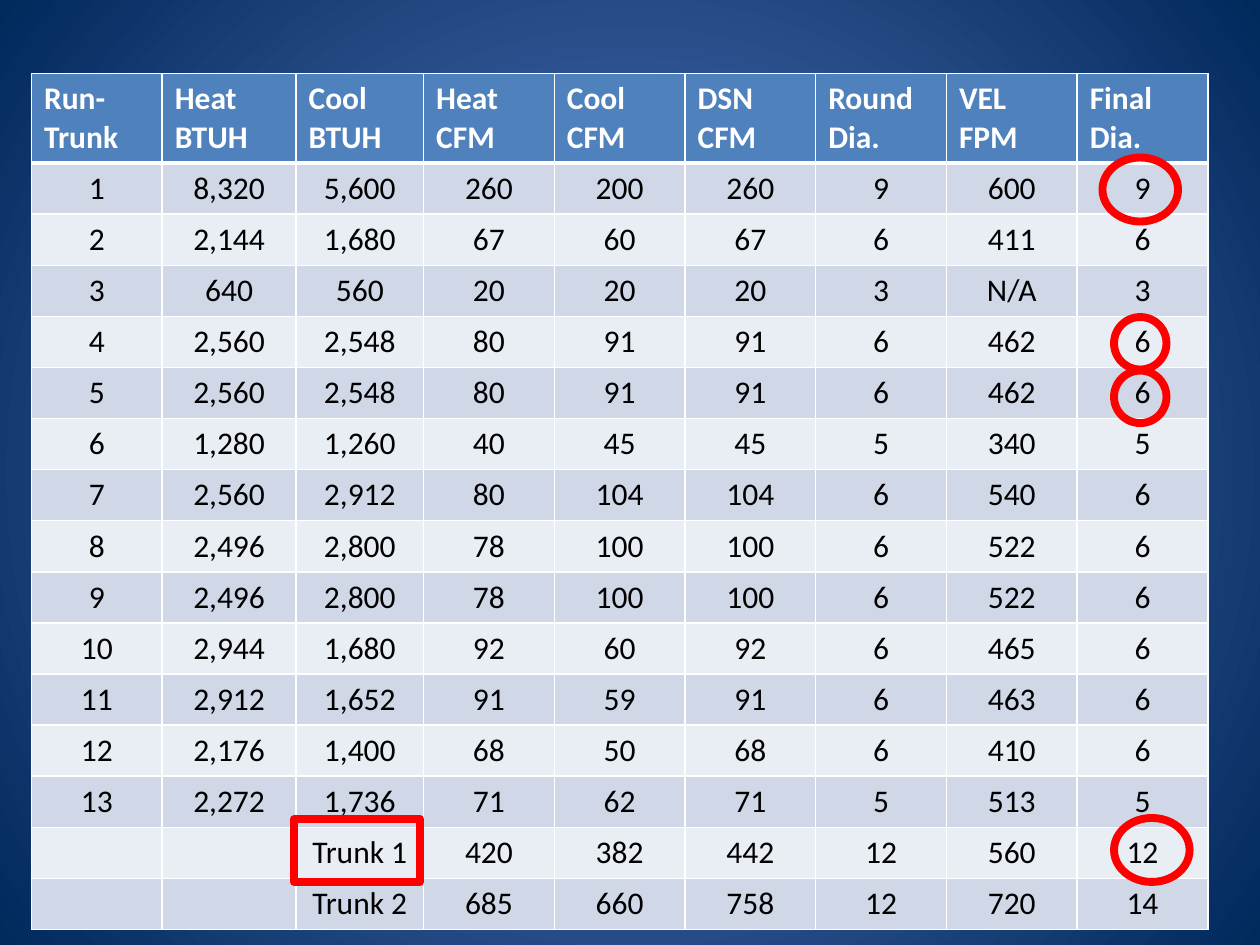
import pptx
import pptx.dml.color
import pptx.enum.shapes
import pptx.enum.text
import pptx.oxml
import pptx.oxml.ns
import pptx.util

COLORS = {
    "glow": "5E7CC5",
    "navy": "00295C",
    "head": "4F81BD",
    "odd": "D0D8E8",
    "even": "E9EDF4",
    "white": "FFFFFF",
    "black": "000000",
    "red": "FF0000",
}
HEADS = ["Run-Trunk", "Heat BTUH", "Cool\nBTUH", "Heat\nCFM", "Cool\nCFM",
         "DSN\nCFM", "Round\nDia.", "VEL\nFPM", "Final\nDia."]
RUNS = [
    ["1", "8,320", "5,600", "260", "200", "260", "9", "600", "9"],
    ["2", "2,144", "1,680", "67", "60", "67", "6", "411", "6"],
    ["3", "640", "560", "20", "20", "20", "3", "N/A", "3"],
    ["4", "2,560", "2,548", "80", "91", "91", "6", "462", "6"],
    ["5", "2,560", "2,548", "80", "91", "91", "6", "462", "6"],
    ["6", "1,280", "1,260", "40", "45", "45", "5", "340", "5"],
    ["7", "2,560", "2,912", "80", "104", "104", "6", "540", "6"],
    ["8", "2,496", "2,800", "78", "100", "100", "6", "522", "6"],
    ["9", "2,496", "2,800", "78", "100", "100", "6", "522", "6"],
    ["10", "2,944", "1,680", "92", "60", "92", "6", "465", "6"],
    ["11", "2,912", "1,652", "91", "59", "91", "6", "463", "6"],
    ["12", "2,176", "1,400", "68", "50", "68", "6", "410", "6"],
    ["13", "2,272", "1,736", "71", "62", "71", "5", "513", "5"],
    ["", "", "Trunk 1", "420", "382", "442", "12", "560", "12"],
    ["", "", "Trunk 2", "685", "660", "758", "12", "720", "14"],
]
# Grid units, 120 across the slide and 90 down
WIDTHS = [12.45, 12.75, 12.15] + [12.45] * 6
ROW = 4.87
OVAL = pptx.enum.shapes.MSO_SHAPE.OVAL
RECT = pptx.enum.shapes.MSO_SHAPE.RECTANGLE
MARKS = [
    (OVAL, 105, 15, 7.2, 6.1),
    (OVAL, 106.1, 30.2, 5, 5),
    (OVAL, 106.1, 35.3, 5, 5),
    (OVAL, 106.1, 77.9, 7.2, 6.1),
    (RECT, 28, 78, 12, 6),
]


def rgb(name):
    return pptx.dml.color.RGBColor.from_string(COLORS[name])


def unit(count):
    """Turn grid units into a length."""
    return pptx.util.Inches(count / 12)


def write(frame, text, color="black", bold=False, align=None, size=18, font="Calibri"):
    """Put each line of text into its own paragraph."""
    for i, line in enumerate(text.split("\n")):
        para = frame.add_paragraph() if i else frame.paragraphs[0]
        para.alignment = align
        para.font.size = pptx.util.Pt(size)
        if line:
            run = para.add_run()
            run.text = line
            run.font.name = font
            run.font.size = pptx.util.Pt(size)
            run.font.bold = bold
            run.font.color.rgb = rgb(color)


def edge(cell, side, points):
    """Draw one white border; borders must stand before the fill."""
    line = pptx.oxml.parse_xml(
        f'<a:ln{side} {pptx.oxml.ns.nsdecls("a")} w="{points * 12700}">'
        f'<a:solidFill><a:srgbClr val="{COLORS["white"]}"/></a:solidFill>'
        f'</a:ln{side}>')
    props = cell._tc.get_or_add_tcPr()
    props.insert("LRTB".index(side), line)


class Deck:
    def __init__(self):
        self.show = pptx.Presentation()
        self.show.slide_width = unit(120)
        self.show.slide_height = unit(90)
        self.slide = self.show.slides.add_slide(self.show.slide_layouts[6])

    def glow(self, inner, outer):
        """Fill the background from the centre outwards."""
        fill = self.slide.background.fill
        fill.gradient()
        for stop, name, place in zip(fill.gradient_stops, (inner, outer), (0, 1)):
            stop.color.rgb = rgb(name)
            stop.position = place
        lin = self.slide._element.find(".//" + pptx.oxml.ns.qn("a:lin"))
        lin.getparent().replace(lin, pptx.oxml.parse_xml(
            f'<a:path {pptx.oxml.ns.nsdecls("a")} path="circle">'
            '<a:fillToRect l="50000" t="50000" r="50000" b="50000"/></a:path>'))

    def table(self, left, top, rows):
        frame = self.slide.shapes.add_table(
            len(rows), len(WIDTHS), unit(left), unit(top),
            unit(sum(WIDTHS)), unit(ROW * len(rows)))
        grid = frame.table
        for col, width in zip(grid.columns, WIDTHS):
            col.width = unit(width)
        for r, row in enumerate(rows):
            grid.rows[r].height = unit(ROW)
            for c, text in enumerate(row):
                self.cell(grid.cell(r, c), r, text)

    def cell(self, cell, row, text):
        head = row == 0
        cell.fill.solid()
        cell.fill.fore_color.rgb = rgb("head" if head else "odd" if row % 2 else "even")
        if head:
            write(cell.text_frame, text, color="white", bold=True)
        else:
            write(cell.text_frame, text, align=pptx.enum.text.PP_ALIGN.CENTER)
        for side in "LRTB":
            thick = (row, side) in ((0, "B"), (1, "T"))
            edge(cell, side, 3 if thick else 1)

    def mark(self, kind, left, top, width, height):
        """Ring a value with a red outline."""
        shape = self.slide.shapes.add_shape(
            kind, unit(left), unit(top), unit(width), unit(height))
        shape.shadow.inherit = False
        shape.fill.background()
        shape.line.color.rgb = rgb("red")
        shape.line.width = pptx.util.Pt(4.5)


def main():
    deck = Deck()
    deck.glow("glow", "navy")
    deck.table(3, 7, [HEADS] + RUNS)
    for spot in MARKS:
        deck.mark(*spot)
    deck.show.save("out.pptx")


if __name__ == "__main__":
    main()
